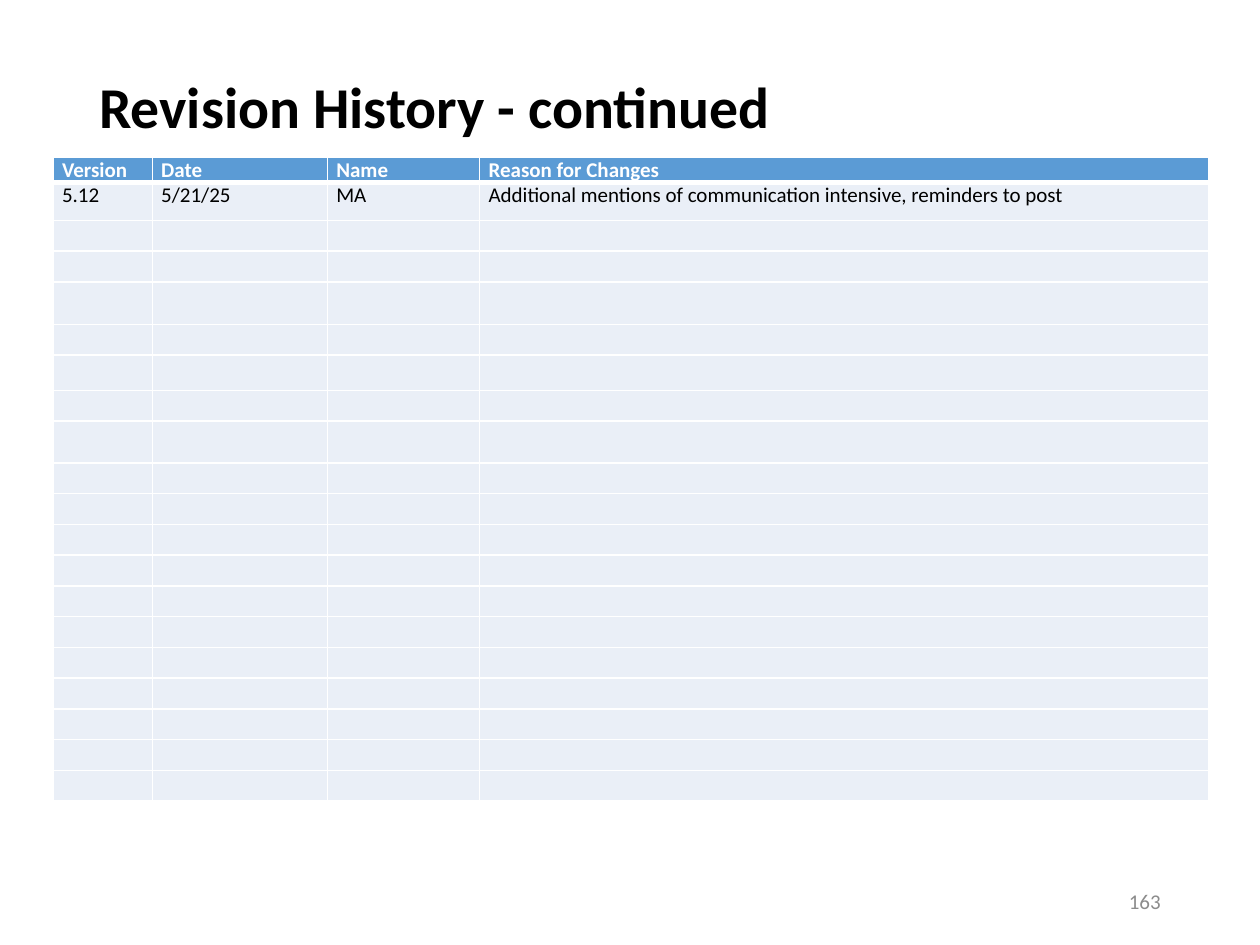
from lxml import etree
from pptx import Presentation
from pptx import util as u
from pptx.dml.color import RGBColor
from pptx.enum import text
from pptx.oxml import ns

BLACK = RGBColor(0, 0, 0)
WHITE = RGBColor(255, 255, 255)
GREY = RGBColor(0x8C, 0x8C, 0x8C)
BLUE = RGBColor(0x5B, 0x9B, 0xD5)
PALE = RGBColor(0xEA, 0xEF, 0xF7)

HEADS = ["Version", "Date", "Name", "Reason for Changes"]
ENTRY = ["5.12", "5/21/25", "MA",
         "Additional mentions of communication intensive, reminders to post"]
COLS = [2.0, 3.53, 3.07, 14.7]
ROW = 0.62
TALL = {0: 0.51, 1: 0.76, 4: 0.86, 6: 0.71, 8: 0.84}
COUNT = 20


def style(para, size, color, bold=False):
    """Set the font of a paragraph."""
    font = para.font
    font.name, font.size, font.bold = "Calibri", u.Pt(size), bold
    font.color.rgb = color


def label(slide, box, words, size, color, bold=False):
    """Add a wrapped text box and return its frame."""
    frame = slide.shapes.add_textbox(*map(u.Cm, box)).text_frame
    frame.word_wrap = True
    para = frame.paragraphs[0]
    para.text = words
    style(para, size, color, bold)
    return frame


def title(slide, box):
    """Place the slide title near the top of its box."""
    frame = label(slide, box, "Revision History - continued", 33, BLACK, True)
    frame.margin_top = u.Cm(0.56)
    frame.vertical_anchor = text.MSO_ANCHOR.TOP
    frame.paragraphs[0].line_spacing = 0.9


def number(slide, box):
    """Place the slide number at the right of its box."""
    frame = label(slide, box, "163", 12, GREY)
    frame.vertical_anchor = text.MSO_ANCHOR.MIDDLE
    frame.paragraphs[0].alignment = text.PP_ALIGN.RIGHT


def border(cell, side, width):
    """Draw one white edge of a cell."""
    props = cell._tc.get_or_add_tcPr()
    line = etree.SubElement(props, ns.qn(f"a:ln{side}"), w=str(u.Pt(width)))
    fill = etree.SubElement(line, ns.qn("a:solidFill"))
    etree.SubElement(fill, ns.qn("a:srgbClr"), val=str(WHITE))


def fill_cell(cell, words, head, under):
    """Write and paint one cell of the history."""
    cell.margin_left = cell.margin_right = u.Cm(0.18)
    cell.margin_top = cell.margin_bottom = 0
    for side in "LRTB":
        thick = (side == "B" and head) or (side == "T" and under)
        border(cell, side, 3 if thick else 1)
    cell.fill.solid()
    cell.fill.fore_color.rgb = BLUE if head else PALE
    para = cell.text_frame.paragraphs[0]
    if words:
        para.text = words
        style(para, 12, WHITE if head else BLACK, head)
    else:
        para._p.get_or_add_endParaRPr().set("sz", "1200")


def history(slide, left, top):
    """Build the revision table from its top left corner."""
    highs = [TALL.get(i, ROW) for i in range(COUNT)]
    size = (left, top, sum(COLS), sum(highs))
    table = slide.shapes.add_table(COUNT, len(COLS), *map(u.Cm, size)).table
    table.horz_banding = False
    for col, wide in zip(table.columns, COLS):
        col.width = u.Cm(wide)
    data = [HEADS, ENTRY] + [[""] * len(COLS)] * (COUNT - 2)
    for i, (row, high) in enumerate(zip(table.rows, highs)):
        row.height = u.Cm(high)
        for cell, words in zip(row.cells, data[i]):
            fill_cell(cell, words, i == 0, i == 1)


def main():
    """Build and save the slide."""
    deck = Presentation()
    deck.slide_width, deck.slide_height = u.Cm(25.4), u.Cm(19.05)
    slide = deck.slides.add_slide(deck.slide_layouts[6])
    title(slide, (1.75, 1.02, 21.9, 3.68))
    history(slide, 1.07, 3.17)
    number(slide, (17.93, 17.65, 5.72, 1.02))
    deck.save("out.pptx")


if __name__ == "__main__":
    main()
